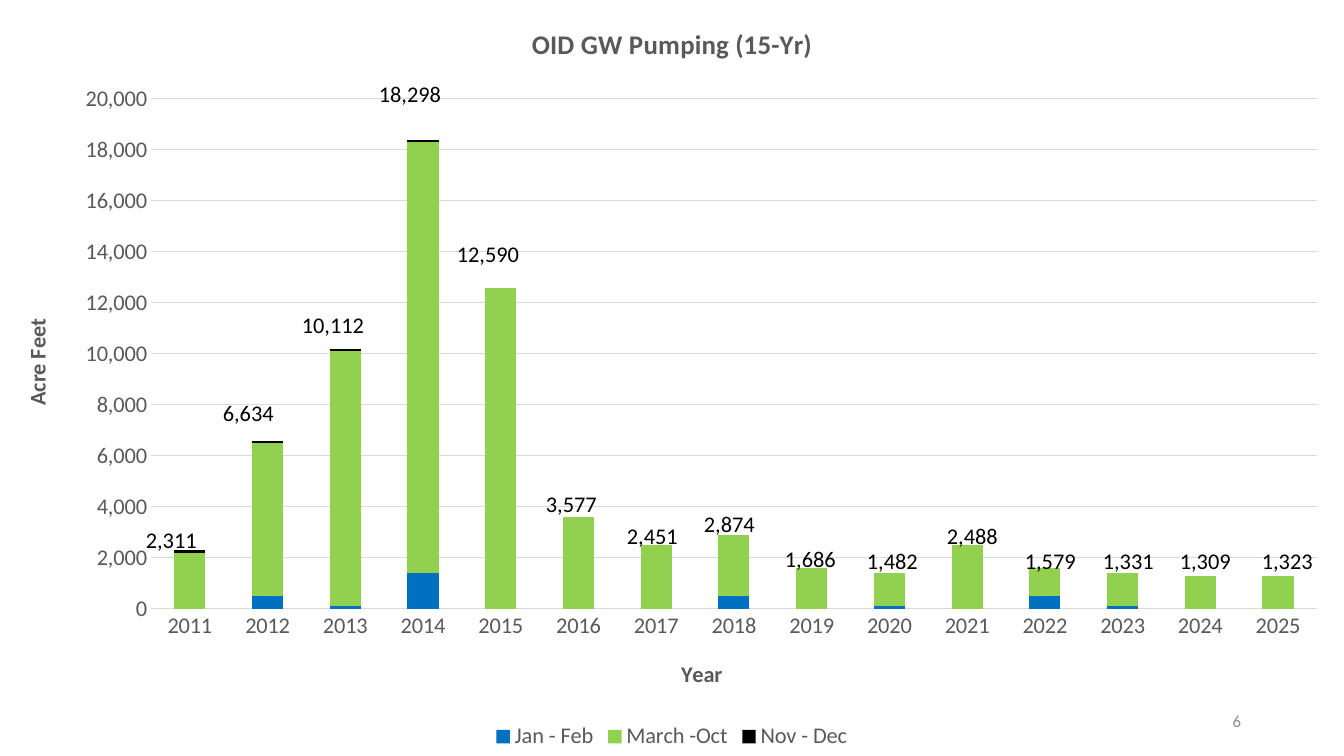
from lxml.etree import SubElement
from pptx import Presentation
from pptx.chart.data import CategoryChartData
from pptx.dml.color import RGBColor
from pptx.enum.chart import XL_CHART_TYPE as ChartType, XL_LEGEND_POSITION as LegendPos, XL_TICK_MARK as Tick
from pptx.enum.text import MSO_ANCHOR as Anchor, MSO_AUTO_SIZE as AutoSize, PP_ALIGN as Align
from pptx.oxml.ns import qn
from pptx.util import Pt

EMU_PER_PX = 914400 / 100.8
WIDTH, HEIGHT = 1344, 756
BLUE = RGBColor(0x00, 0x70, 0xC0)
GREEN = RGBColor(0x92, 0xD0, 0x50)
BLACK = RGBColor(0, 0, 0)
DARK_GRAY = RGBColor(0x59, 0x59, 0x59)
PAGE_GRAY = RGBColor(0x8C, 0x8C, 0x8C)
GRID_GRAY = RGBColor(0xD9, 0xD9, 0xD9)

# year, Jan - Feb, March - Oct, Nov - Dec, total, label left, label top, label width
PUMPING = [
    (2011, 0, 2200, 100, 2311, 136, 521, 90),
    (2012, 500, 6000, 100, 6634, 213, 394, 90),
    (2013, 100, 10000, 100, 10112, 292, 306, 90),
    (2014, 1400, 16900, 100, 18298, 369, 75, 90),
    (2015, 0, 12600, 0, 12590, 447, 235, 87),
    (2016, 0, 3600, 0, 3577, 536, 485, 78),
    (2017, 0, 2500, 0, 2451, 617, 517, 76),
    (2018, 500, 2400, 0, 2874, 694, 505, 78),
    (2019, 0, 1600, 0, 1686, 775, 540, 78),
    (2020, 100, 1300, 0, 1482, 857, 542, 78),
    (2021, 0, 2500, 0, 2488, 937, 517, 76),
    (2022, 500, 1100, 0, 1579, 1015, 542, 76),
    (2023, 100, 1300, 0, 1331, 1093, 542, 85),
    (2024, 0, 1300, 0, 1309, 1170, 542, 85),
    (2025, 0, 1300, 0, 1323, 1252, 542, 85),
]


def px(length):
    return round(length * EMU_PER_PX)


def place(part, index, left, top, size=None):
    """Fix a chart part's position in px; its layout is child number index."""
    old = part.find(qn("c:layout"))
    if old is not None:
        part.remove(old)
    layout = part.makeelement(qn("c:layout"))
    part.insert(index, layout)
    manual = SubElement(layout, qn("c:manualLayout"))
    settings = [("xMode", "edge"), ("yMode", "edge"), ("x", left / WIDTH), ("y", top / HEIGHT)]
    if size:
        settings.insert(0, ("layoutTarget", "inner"))
        settings += [("w", size[0] / WIDTH), ("h", size[1] / HEIGHT)]
    for tag, value in settings:
        SubElement(manual, qn(f"c:{tag}")).set("val", str(value))


class PumpingSlide:
    def __init__(self, slide, font="Calibri", size=16):
        self.slide, self.font, self.size = slide, font, size

    def style(self, font, color, size=None, bold=False):
        font.name, font.size, font.bold = self.font, Pt(size or self.size), bold
        font.color.rgb = color

    def text(self, words, left, top, width, height=37, color=BLACK, size=None, align=Align.LEFT):
        box = self.slide.shapes.add_textbox(px(left), px(top), px(width), px(height))
        frame = box.text_frame
        frame.word_wrap = True
        frame.text = words
        frame.paragraphs[0].alignment = align
        self.style(frame.paragraphs[0].font, color, size)
        return frame

    def title(self, title, words, left, top, size=None):
        title.text_frame.text = words
        self.style(title.text_frame.paragraphs[0].font, DARK_GRAY, size, bold=True)
        place(title._element, 1, left, top)

    def axis(self, axis, words, left, top):
        axis.major_tick_mark = axis.minor_tick_mark = Tick.NONE
        self.style(axis.tick_labels.font, DARK_GRAY)
        self.title(axis.axis_title, words, left, top)

    def stacked_columns(self, categories, series):
        data = CategoryChartData(number_format="#,##0")
        data.categories = categories
        for name, values, _ in series:
            data.add_series(name, values)
        chart = self.slide.shapes.add_chart(
            ChartType.COLUMN_STACKED, 0, 0, px(WIDTH), px(HEIGHT), data).chart
        self.style(chart.font, BLACK)
        plot = chart.plots[0]
        plot.gap_width, plot.overlap, plot.vary_by_categories = 150, 100, False
        for column, (_, _, color) in zip(plot.series, series):
            column.format.fill.solid()
            column.format.fill.fore_color.rgb = color
        place(chart._chartSpace.chart.plotArea, 0, 151, 99, (1166, 510))
        return chart

    def legend(self, chart, left, top):
        chart.has_legend = True
        chart.legend.position = LegendPos.BOTTOM
        chart.legend.include_in_layout = False
        self.style(chart.legend.font, DARK_GRAY)
        place(chart.legend._element, 1, left, top)


def main():
    deck = Presentation()
    deck.slide_width, deck.slide_height = px(WIDTH), px(HEIGHT)
    page = PumpingSlide(deck.slides.add_slide(deck.slide_layouts[6]))

    years, winter, season, late_year, *_ = zip(*PUMPING)
    chart = page.stacked_columns([str(year) for year in years], [
        ("Jan - Feb", winter, BLUE),
        ("March -Oct", season, GREEN),
        ("Nov - Dec", late_year, BLACK),
    ])
    page.title(chart.chart_title, "OID GW Pumping (15-Yr)", 527, 20, 19.2)
    page.axis(chart.category_axis, "Year", 677, 655)
    page.axis(chart.value_axis, "Acre Feet", 18, 315)
    page.legend(chart, 489, 723)

    acre_feet = chart.value_axis
    acre_feet.minimum_scale, acre_feet.maximum_scale, acre_feet.major_unit = 0, 20000, 2000
    acre_feet.tick_labels.number_format = "#,##0"
    acre_feet.tick_labels.number_format_is_linked = False
    acre_feet.format.line.fill.background()
    for line in (acre_feet.major_gridlines.format.line, chart.category_axis.format.line):
        line.color.rgb, line.width = GRID_GRAY, Pt(0.75)

    for *_, total, left, top, width in PUMPING:
        page.text(f"{total:,}", left, top, width).auto_size = AutoSize.SHAPE_TO_FIT_TEXT
    page_number = page.text("6", 949, 701, 302, 40, PAGE_GRAY, 12, Align.RIGHT)
    page_number.vertical_anchor = Anchor.MIDDLE
    deck.save("out.pptx")


if __name__ == "__main__":
    main()
